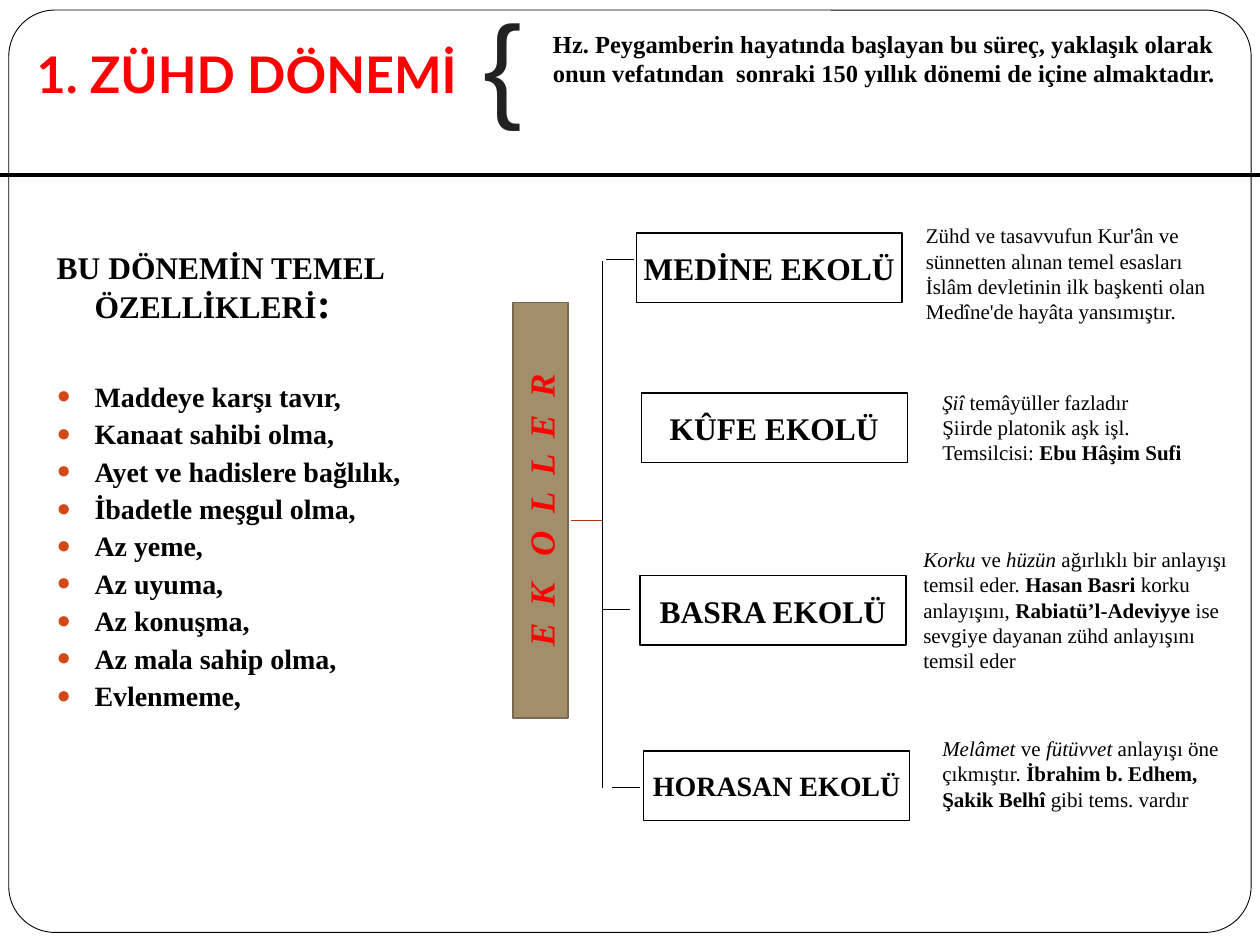
from lxml import etree
from pptx import Presentation
from pptx.dml.color import RGBColor
from pptx.enum import shapes, text
from pptx.oxml import ns
from pptx.util import Inches, Pt

BLACK = RGBColor(0x00, 0x00, 0x00)
WHITE = RGBColor(0xFF, 0xFF, 0xFF)
RED = RGBColor(0xFF, 0x00, 0x00)
ORANGE = RGBColor(0xD3, 0x48, 0x17)
RUST = RGBColor(0xB1, 0x36, 0x0B)
TAN = RGBColor(0xA2, 0x8E, 0x6A)
BROWN = RGBColor(0x78, 0x69, 0x4E)
CHARCOAL = RGBColor(0x22, 0x22, 0x22)
SERIF = "Times New Roman"


def add_span(para, words, size, style="", color=BLACK, font=SERIF):
    span = para.add_run()
    span.text = words
    span.font.name = font
    span.font.size = Pt(size)
    span.font.bold = "b" in style
    span.font.italic = "i" in style
    span.font.color.rgb = color


def add_box(place, fill=None, line=None, width=0.75, kind=shapes.MSO_SHAPE.RECTANGLE):
    lengths = [Inches(length) for length in place]
    if fill is None:
        box = slide.shapes.add_textbox(*lengths)
    else:
        box = slide.shapes.add_shape(kind, *lengths)
        box.shadow.inherit = False
        box.fill.solid()
        box.fill.fore_color.rgb = fill
        box.line.color.rgb = line
        box.line.width = Pt(width)
    box.text_frame.word_wrap = True
    return box


deck = Presentation()
deck.slide_width, deck.slide_height = Inches(10), Inches(7.5)
slide = deck.slides.add_slide(deck.slide_layouts[1])

frame = add_box((0.07, 0.08, 9.86, 7.32), WHITE, BLACK, 0.5, shapes.MSO_SHAPE.ROUNDED_RECTANGLE)
frame.adjustments[0] = 0.05
slide.shapes._spTree.insert(2, frame._element)

title, body = slide.placeholders
for holder, place in ((title, (0.19, 0.29, 3.76, 0.63)), (body, (0.35, 1.47, 3.6, 5.67))):
    holder.left, holder.top, holder.width, holder.height = [Inches(length) for length in place]
    holder.text_frame.auto_size = text.MSO_AUTO_SIZE.NONE

title.text_frame.vertical_anchor = text.MSO_ANCHOR.BOTTOM
title.text_frame.margin_bottom = Inches(0.1)
para = title.text_frame.paragraphs[0]
para.alignment = text.PP_ALIGN.LEFT
add_span(para, "1. ZÜHD DÖNEMİ", 28.8, "b", RED, "Lato")

traits = ["Maddeye karşı tavır,", "Kanaat sahibi olma,", "Ayet ve hadislere bağlılık,",
          "İbadetle meşgul olma,", "Az yeme,", "Az uyuma,", "Az konuşma,",
          "Az mala sahip olma,", "Evlenmeme,"]
body.text_frame.margin_top = Inches(0.56)
heading = body.text_frame.paragraphs[0]
heading.space_before = Pt(0)
add_span(heading, "BU DÖNEMİN TEMEL ÖZELLİKLERİ", 18, "b")
add_span(heading, ":", 24, "b")
for index, trait in enumerate(traits):
    para = body.text_frame.add_paragraph()
    para.space_before = Pt(6 if index else 34)
    add_span(para, trait, 16, "b")
for para in body.text_frame.paragraphs:
    para.line_spacing = 0.8
    properties = para._p.get_or_add_pPr()
    properties.set("marL", str(Inches(0.3)))
    properties.set("indent", str(-Inches(0.3)))
    if para.text not in traits:
        etree.SubElement(properties, ns.qn("a:buNone"))
        continue
    bullet_color = etree.SubElement(properties, ns.qn("a:buClr"))
    etree.SubElement(bullet_color, ns.qn("a:srgbClr"), val=str(ORANGE))
    etree.SubElement(properties, ns.qn("a:buSzPct"), val="85000")
    etree.SubElement(properties, ns.qn("a:buFont"), typeface=SERIF)
    etree.SubElement(properties, ns.qn("a:buChar"), char="●")

intro = add_box((4.29, 0.18, 5.57, 0.81))
add_span(intro.text_frame.paragraphs[0],
         "Hz. Peygamberin hayatında başlayan bu süreç, yaklaşık olarak onun vefatından  "
         "sonraki 150 yıllık dönemi de içine almaktadır.", 14, "b")

brace = add_box((3.74, -0.11, 0.22, 1.21))
add_span(brace.text_frame.paragraphs[0], "{", 66, "", CHARCOAL, "Arial")

banner = add_box((2.64, 3.83, 3.3, 0.44), TAN, BROWN, 1)
banner.rotation = 270
para = banner.text_frame.paragraphs[0]
para.alignment = text.PP_ALIGN.CENTER
add_span(para, "E  K   O  L  L  E  R", 20, "bi", RED)

for x1, y1, x2, y2, color, width in (
        (0, 1.39, 10, 1.39, BLACK, 2.25),
        (4.78, 6.25, 4.78, 2.07, BLACK, 0.75),
        (4.81, 2.06, 5.03, 2.06, BLACK, 0.75),
        (4.78, 4.84, 5, 4.84, BLACK, 0.75),
        (4.86, 6.25, 5.08, 6.25, BLACK, 0.75),
        (4.53, 4.13, 4.78, 4.13, RUST, 0.75)):
    line = slide.shapes.add_connector(shapes.MSO_CONNECTOR.STRAIGHT, Inches(x1), Inches(y1),
                                      Inches(x2), Inches(y2))
    line.line.color.rgb = color
    line.line.width = Pt(width)
    etree.SubElement(line._element.spPr, ns.qn("a:effectLst"))

schools = [
    ("MEDİNE EKOLÜ", 18, 5.05, 1.85, (7.25, 1.72, 2.64, 0.91), False, [
        [("Zühd ve tasavvufun Kur'ân ve", "")],
        [("sünnetten alınan temel esasları", "")],
        [("İslâm devletinin ilk başkenti olan", "")],
        [("Medîne'de hayâta yansımıştır.", "")]]),
    ("KÛFE EKOLÜ", 18, 5.09, 3.12, (7.38, 3.04, 2.25, 0.71), False, [
        [("Şiî ", "i"), ("temâyüller fazladır", "")],
        [("Şiirde platonik aşk işl.", "")],
        [("Temsilcisi: ", ""), ("Ebu Hâşim Sufi", "b")]]),
    ("BASRA EKOLÜ", 18, 5.08, 4.57, (7.23, 4.29, 2.77, 1.11), True, [
        [("Korku", "i"), (" ve ", ""), ("hüzün", "i"),
         (" ağırlıklı bir anlayışı temsil eder. ", ""), ("Hasan Basri ", "b"),
         ("korku anlayışını, ", ""), ("Rabiatü’l-Adeviyye", "b"),
         (" ise sevgiye dayanan zühd anlayışını temsil eder", "")]]),
    ("HORASAN EKOLÜ", 16, 5.11, 5.96, (7.38, 5.79, 2.62, 0.91), True, [
        [("Melâmet", "i"), (" ve ", ""), ("fütüvvet", "i"),
         (" anlayışı öne çıkmıştır. ", ""), ("İbrahim b. Edhem, Şakik Belhî", "b"),
         (" gibi tems. vardır", "")]]),
]
for name, size, left, top, note_place, wrap, lines in schools:
    school = add_box((left, top, 2.11, 0.55), WHITE, BLACK)
    school.text_frame.word_wrap = False
    school.text_frame.vertical_anchor = text.MSO_ANCHOR.MIDDLE
    para = school.text_frame.paragraphs[0]
    para.alignment = text.PP_ALIGN.CENTER
    add_span(para, name, size, "b")

    note = add_box(note_place)
    note.text_frame.word_wrap = wrap
    for index, spans in enumerate(lines):
        para = note.text_frame.add_paragraph() if index else note.text_frame.paragraphs[0]
        for words, style in spans:
            add_span(para, words, 12, style)

deck.save("out.pptx")
